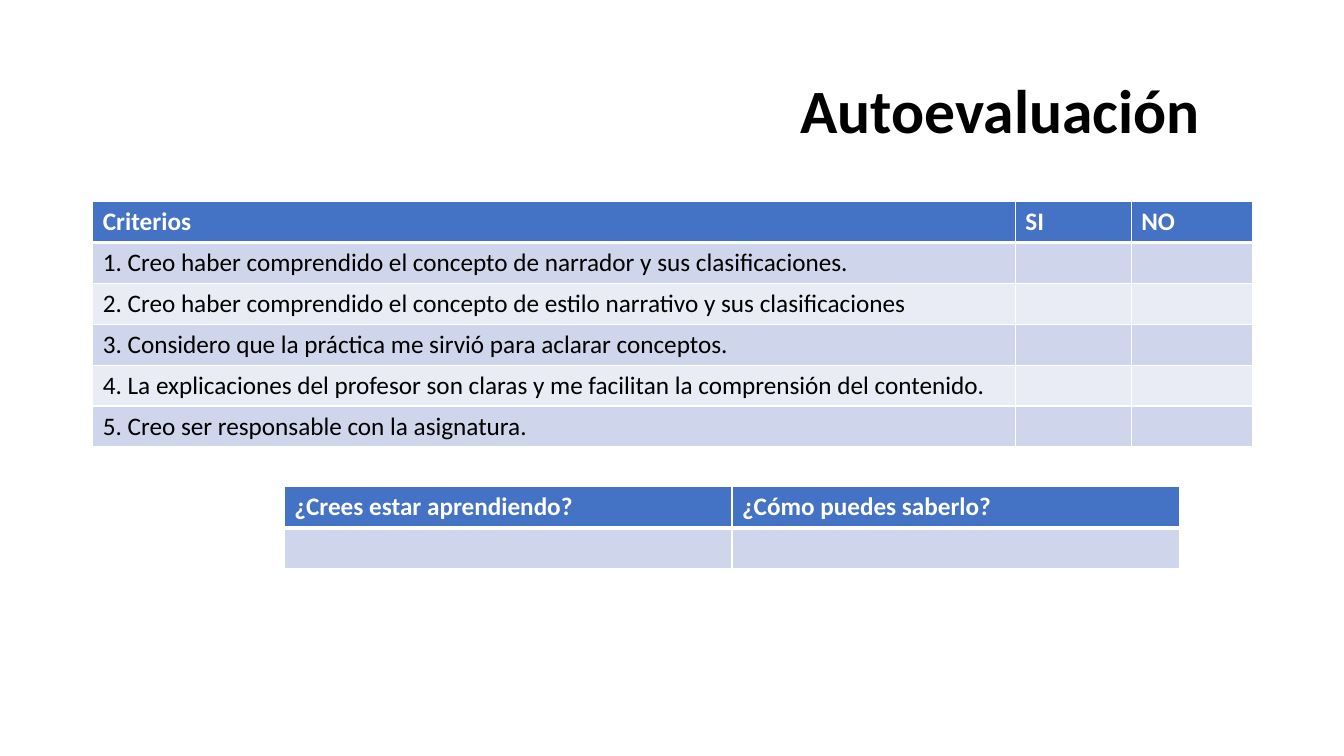
from lxml import etree
from pptx import Presentation
from pptx.dml.color import RGBColor
from pptx.enum.text import MSO_ANCHOR as Anchor, PP_ALIGN as Align
from pptx.oxml.ns import qn
from pptx.util import Inches, Pt

FONT = "Calibri"
BLACK = RGBColor(0x00, 0x00, 0x00)
WHITE = RGBColor(0xFF, 0xFF, 0xFF)
BLUE = RGBColor(0x44, 0x72, 0xC4)
BANDS = [RGBColor(0xE9, 0xEB, 0xF5), RGBColor(0xCF, 0xD5, 0xEA)]

CRITERIA = [
    ["Criterios", "SI", "NO"],
    ["1. Creo haber comprendido el concepto de narrador y sus clasificaciones."],
    ["2. Creo haber comprendido el concepto de estilo narrativo y sus clasificaciones"],
    ["3. Considero que la práctica me sirvió para aclarar conceptos."],
    ["4. La explicaciones del profesor son claras y me facilitan la comprensión del contenido."],
    ["5. Creo ser responsable con la asignatura."],
]
LEARNING = [["¿Crees estar aprendiendo?", "¿Cómo puedes saberlo?"], []]


def add_run(para, text, size, color, bold):
    run = para.add_run()
    run.text = text
    font = run.font
    font.name, font.size, font.bold = FONT, Pt(size), bold
    font.color.rgb = color


def set_title(slide, text, left, top, width, height):
    title = slide.shapes.title
    title.left, title.top = Inches(left), Inches(top)
    title.width, title.height = Inches(width), Inches(height)
    frame = title.text_frame
    frame.word_wrap = True
    frame.vertical_anchor = Anchor.MIDDLE
    para = frame.paragraphs[0]
    para.alignment = Align.LEFT
    para.line_spacing = 0.9
    add_run(para, text, 44, BLACK, True)


def set_edges(cell, top, bottom):
    """Draw white cell borders; widths are in points."""
    props = cell._tc.get_or_add_tcPr()
    edges = [("a:lnL", 1), ("a:lnR", 1), ("a:lnT", top), ("a:lnB", bottom)]
    for pos, (tag, width) in enumerate(edges):
        line = etree.Element(qn(tag), w=str(Pt(width)))
        fill = etree.SubElement(line, qn("a:solidFill"))
        etree.SubElement(fill, qn("a:srgbClr"), val=str(WHITE))
        props.insert(pos, line)


def add_grid(slide, rows, widths, left, top, height):
    frame = slide.shapes.add_table(
        len(rows), len(widths), Inches(left), Inches(top),
        Inches(sum(widths)), Inches(height))
    table = frame.table
    for col, width in zip(table.columns, widths):
        col.width = Inches(width)
    for r, texts in enumerate(rows):
        head = r == 0
        for c in range(len(widths)):
            cell = table.cell(r, c)
            cell.fill.solid()
            cell.fill.fore_color.rgb = BLUE if head else BANDS[r % 2]
            # The thick rule separates the header from the body
            set_edges(cell, 3 if r == 1 else 1, 3 if head else 1)
            if c < len(texts):
                add_run(cell.text_frame.paragraphs[0], texts[c], 18,
                        WHITE if head else BLACK, head)


def main():
    deck = Presentation()
    deck.slide_width, deck.slide_height = Inches(13.33), Inches(7.5)
    slide = deck.slides.add_slide(deck.slide_layouts[5])

    # Title
    set_title(slide, "Autoevaluación", 7.84, 0.4, 4.57, 1.45)

    # Self-assessment checklist and open questions
    add_grid(slide, CRITERIA, [9.15, 1.15, 1.2], 0.92, 2, 2.43)
    add_grid(slide, LEARNING, [4.44, 4.44], 2.82, 4.83, 0.81)

    deck.save("out.pptx")


if __name__ == "__main__":
    main()
